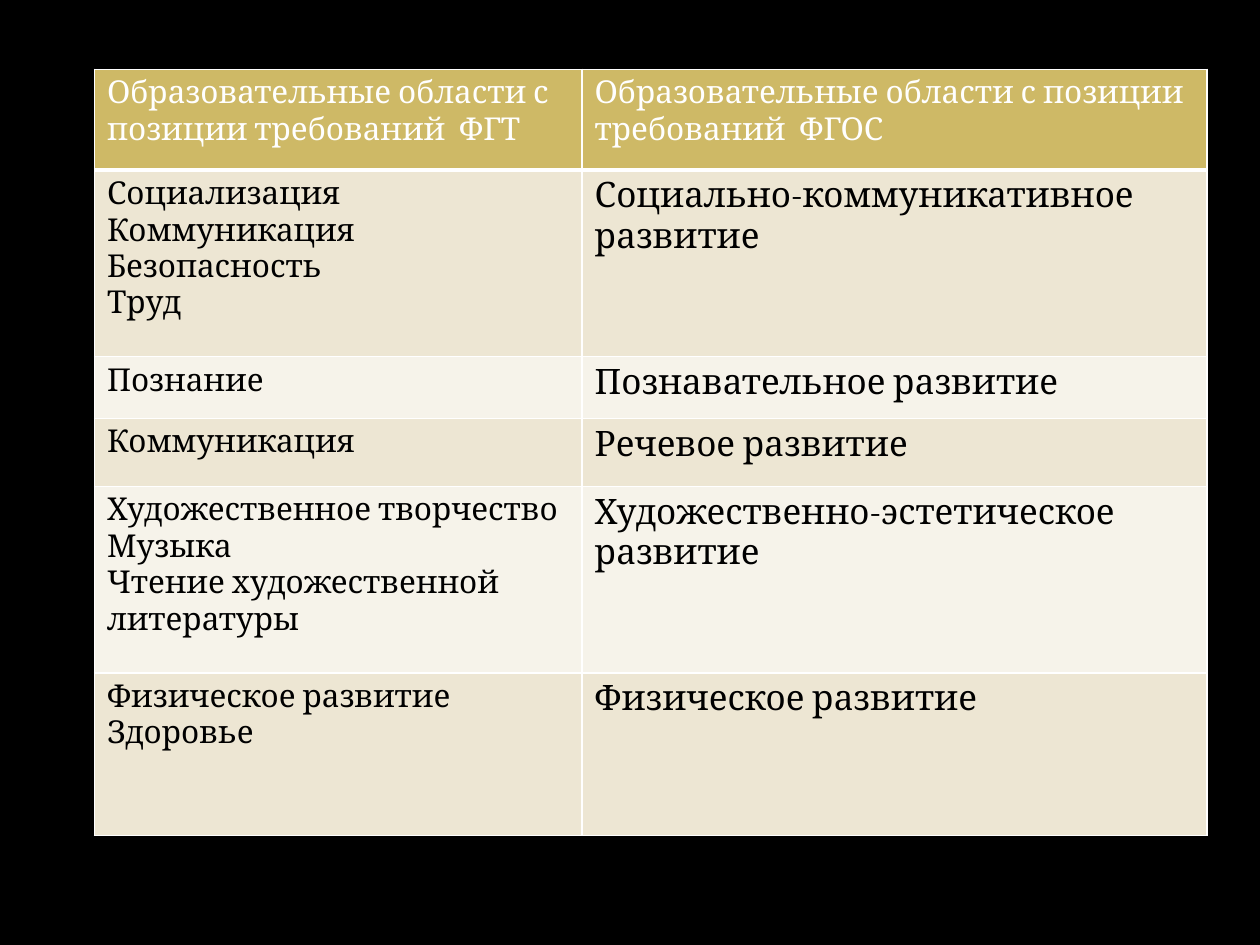
from lxml.etree import SubElement
from pptx import Presentation
from pptx.dml.color import RGBColor
from pptx.oxml.ns import qn
from pptx.util import Inches, Pt

WHITE, BLACK = "FFFFFF", "000000"
GOLD, SAND, CREAM = "CEB966", "EDE6D3", "F6F3EA"
COL_WIDTHS = [3.87, 4.96]
ROW_HEIGHTS = [0.8, 1.48, 0.49, 0.54, 1.48, 1.29]
AREAS = [
    (["Образовательные области с позиции требований  ФГТ"],
     ["Образовательные области с позиции требований  ФГОС"]),
    (["Социализация", "Коммуникация", "Безопасность", "Труд"],
     ["Социально-коммуникативное развитие"]),
    (["Познание"], ["Познавательное развитие"]),
    (["Коммуникация"], ["Речевое развитие"]),
    (["Художественное творчество", "Музыка", "Чтение художественной литературы"],
     ["Художественно-эстетическое развитие"]),
    (["Физическое развитие", "Здоровье"], ["Физическое развитие"]),
]


def rgb(value):
    return RGBColor.from_string(value)


def paint(fill, color):
    fill.solid()
    fill.fore_color.rgb = rgb(color)


def set_borders(cell, widths, color=WHITE):
    tcPr = cell._tc.get_or_add_tcPr()
    for i, (side, width) in enumerate(widths.items()):
        ln = SubElement(tcPr, qn(f"a:ln{side}"), w=str(Pt(width)))
        SubElement(SubElement(ln, qn("a:solidFill")), qn("a:srgbClr"), val=color)
        tcPr.insert(i, ln)


def write_cell(cell, lines, size, color):
    tf = cell.text_frame
    for i, line in enumerate(lines):
        p = tf.add_paragraph() if i else tf.paragraphs[0]
        r = p.add_run()
        r.text = line
        for name, value in {"name": "Cambria", "size": Pt(size), "bold": False}.items():
            setattr(r.font, name, value)
        r.font.color.rgb = rgb(color)


def add_areas_table(s):
    frame = s.shapes.add_table(
        len(AREAS), len(COL_WIDTHS), Inches(0.75), Inches(0.55),
        Inches(sum(COL_WIDTHS)), Inches(sum(ROW_HEIGHTS)))
    table = frame.table
    for column, width in zip(table.columns, COL_WIDTHS):
        column.width = Inches(width)
    for i, (row, height, area) in enumerate(zip(table.rows, ROW_HEIGHTS, AREAS)):
        row.height = Inches(height)
        header = i == 0
        color = WHITE if header else BLACK
        fill = GOLD if header else SAND if i % 2 else CREAM
        for cell, lines, body_size in zip(row.cells, area, (18, 20)):
            write_cell(cell, lines, 18 if header else body_size, color)
            paint(cell.fill, fill)
            set_borders(cell, {"L": 1, "R": 1, "T": 1, "B": 3 if header else 1})


def main():
    prs = Presentation()
    prs.slide_width, prs.slide_height = Inches(10), Inches(7.5)
    s = prs.slides.add_slide(prs.slide_layouts[6])
    paint(s.background.fill, BLACK)
    add_areas_table(s)
    prs.save("out.pptx")


if __name__ == "__main__":
    main()
